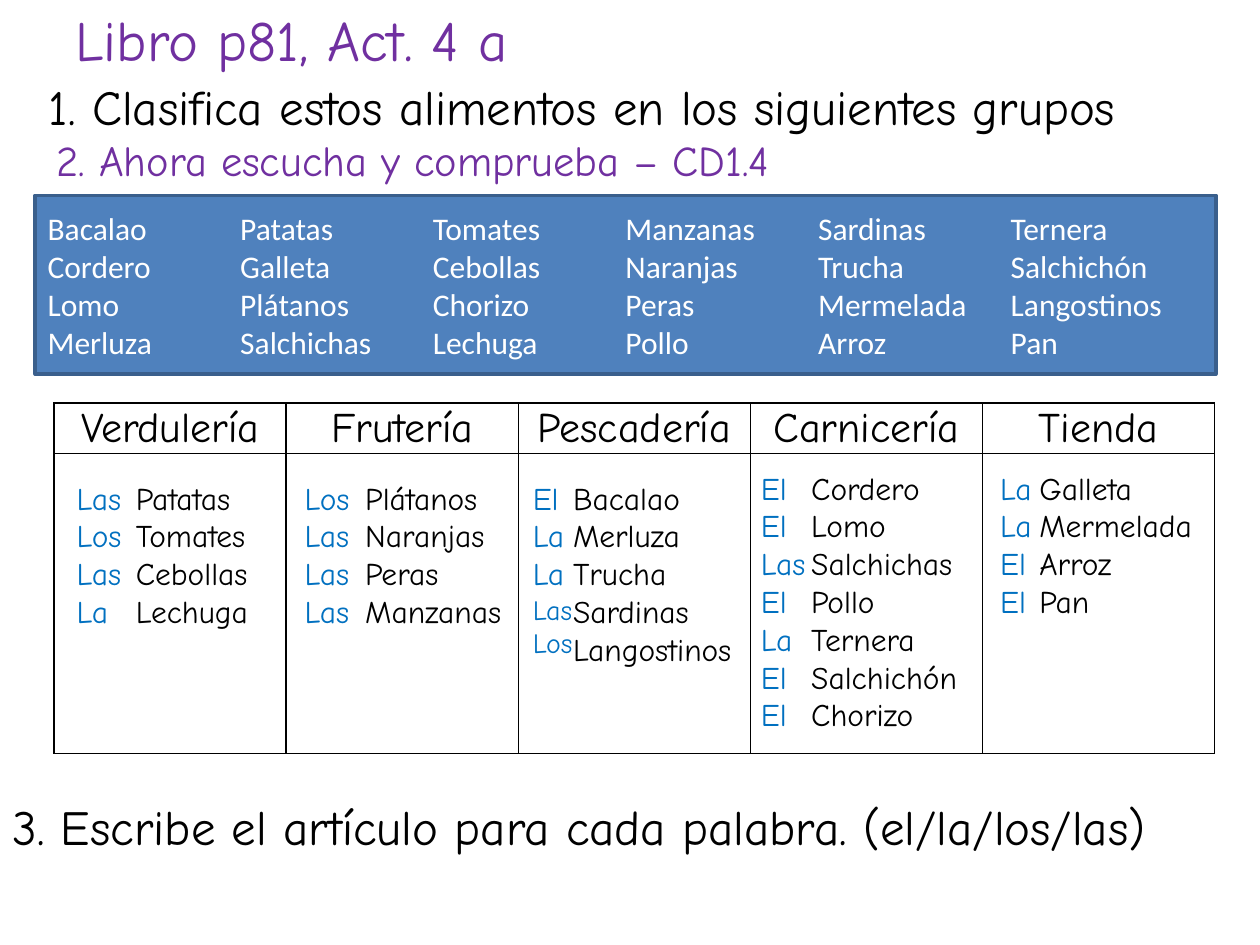
from dataclasses import dataclass

from lxml import etree
from pptx import Presentation
from pptx.dml.color import RGBColor
from pptx.enum.shapes import MSO_SHAPE
from pptx.enum.text import MSO_ANCHOR, PP_ALIGN
from pptx.oxml.ns import qn
from pptx.util import Inches, Pt

LEFT, CENTER = PP_ALIGN.LEFT, PP_ALIGN.CENTER
TOP, MIDDLE = MSO_ANCHOR.TOP, MSO_ANCHOR.MIDDLE
RECTANGLE = MSO_SHAPE.RECTANGLE

HAND_FONT, BOX_FONT = "Comic Neue", "Calibri"
BLACK, WHITE, PURPLE, ARTICLE_BLUE = "000000", "FFFFFF", "7030A0", "0070C0"
BOX_FILL, BOX_EDGE = "4F81BD", "3A5F8C"

FOODS = [
    "Bacalao", "Cordero", "Lomo", "Merluza",
    "Patatas", "Galleta", "Plátanos", "Salchichas",
    "Tomates", "Cebollas", "Chorizo", "Lechuga",
    "Manzanas", "Naranjas", "Peras", "Pollo",
    "Sardinas", "Trucha", "Mermelada", "Arroz",
    "Ternera", "Salchichón", "Langostinos", "Pan",
]
FOOD_COLUMNS = 6


@dataclass
class Shop:
    name: str
    top: float
    article_left: float
    article_width: float
    food_left: float
    food_width: float
    answers: list[tuple[str, str]]


SHOPS = [
    Shop("Verdulería", 3.75, 0.51, 0.59, 0.98, 1.26,
         [("Las", "Patatas"), ("Los", "Tomates"), ("Las", "Cebollas"), ("La", "Lechuga")]),
    Shop("Frutería", 3.75, 2.32, 0.67, 2.8, 1.42,
         [("Los", "Plátanos"), ("Las", "Naranjas"), ("Las", "Peras"), ("Las", "Manzanas")]),
    Shop("Pescadería", 3.75, 4.13, 0.62, 4.45, 1.73,
         [("El", "Bacalao"), ("La", "Merluza"), ("La", "Trucha"),
          ("Las", "Sardinas"), ("Los", "Langostinos")]),
    Shop("Carnicería", 3.67, 5.94, 0.59, 6.34, 1.73,
         [("El", "Cordero"), ("El", "Lomo"), ("Las", "Salchichas"), ("El", "Pollo"),
          ("La", "Ternera"), ("El", "Salchichón"), ("El", "Chorizo")]),
    Shop("Tienda", 3.67, 7.84, 0.47, 8.15, 1.5,
         [("La", "Galleta"), ("La", "Mermelada"), ("El", "Arroz"), ("El", "Pan")]),
]
TIGHT_SHOP, TIGHT_ARTICLES = "Pescadería", ("Las", "Los")


def rgb(value: str) -> RGBColor:
    return RGBColor.from_string(value)


def write_lines(frame, lines: list[str], sizes: list[float], color: str,
                font: str = HAND_FONT, align=LEFT) -> None:
    """Write one paragraph per line, each with its own size."""
    for index, (line, size) in enumerate(zip(lines, sizes)):
        paragraph = frame.paragraphs[0] if index == 0 else frame.add_paragraph()
        paragraph.alignment = align
        run = paragraph.add_run()
        run.text = line
        run.font.size = Pt(size)
        run.font.name = font
        run.font.color.rgb = rgb(color)


def add_text(slide, left: float, top: float, width: float, height: float,
             lines: list[str], sizes: list[float], color: str, wrap: bool = False):
    box = slide.shapes.add_textbox(Inches(left), Inches(top), Inches(width), Inches(height))
    box.text_frame.word_wrap = wrap
    write_lines(box.text_frame, lines, sizes, color)
    return box.text_frame


def add_title(slide, text: str) -> None:
    title = slide.shapes.title
    title.left, title.top = Inches(0.34), Inches(0.05)
    title.width, title.height = Inches(8.5), Inches(0.63)
    frame = title.text_frame
    frame.vertical_anchor = TOP
    frame.margin_left = Inches(0.26)
    write_lines(frame, [text], [32.4], PURPLE)
    frame.paragraphs[0].line_spacing = 0.9


def add_food_box(slide) -> None:
    box = slide.shapes.add_shape(RECTANGLE, Inches(0.28), Inches(1.55),
                                 Inches(9.37), Inches(1.42))
    box.shadow.inherit = False
    box.fill.solid()
    box.fill.fore_color.rgb = rgb(BOX_FILL)
    box.line.color.rgb = rgb(BOX_EDGE)
    box.line.width = Pt(2)
    frame = box.text_frame
    frame.word_wrap = True
    frame.vertical_anchor = MIDDLE
    write_lines(frame, FOODS, [18] * len(FOODS), WHITE, BOX_FONT)
    box.element.txBody.find(qn("a:bodyPr")).set("numCol", str(FOOD_COLUMNS))


def add_borders(cell) -> None:
    properties = cell._tc.get_or_add_tcPr()
    for side in ("a:lnL", "a:lnR", "a:lnT", "a:lnB"):
        line = etree.SubElement(properties, qn(side), w=str(Pt(1)))
        fill = etree.SubElement(line, qn("a:solidFill"))
        etree.SubElement(fill, qn("a:srgbClr"), val=BLACK)


def add_shop_table(slide) -> None:
    table = slide.shapes.add_table(2, len(SHOPS), Inches(0.43), Inches(3.2),
                                   Inches(9.21), Inches(2.78)).table
    table.first_row = table.horz_banding = False
    table.rows[0].height, table.rows[1].height = Inches(0.4), Inches(2.38)
    for cell in table.iter_cells():
        add_borders(cell)
        cell.fill.background()
    for column, shop in enumerate(SHOPS):
        header = table.cell(0, column)
        header.vertical_anchor = MIDDLE
        header.margin_left = header.margin_right = Inches(0.05)
        header.margin_top = header.margin_bottom = 0
        write_lines(header.text_frame, [shop.name], [24], BLACK, align=CENTER)


def add_answers(slide, shop: Shop) -> None:
    articles = [article for article, _ in shop.answers]
    foods = [food for _, food in shop.answers]
    sizes = [16 if shop.name == TIGHT_SHOP and article in TIGHT_ARTICLES else 18
             for article in articles]
    height = 0.1 + 0.3 * len(foods)
    add_text(slide, shop.food_left, shop.top, shop.food_width, height,
             foods, [18] * len(foods), BLACK, wrap=True)
    add_text(slide, shop.article_left, shop.top, shop.article_width, height,
             articles, sizes, ARTICLE_BLUE)


def main() -> None:
    presentation = Presentation()
    presentation.slide_width, presentation.slide_height = Inches(10), Inches(7.5)
    slide = presentation.slides.add_slide(presentation.slide_layouts[5])

    # Heading and the first two tasks
    add_title(slide, "Libro p81, Act. 4 a")
    add_text(slide, 0.29, 0.56, 9.67, 0.57,
             ["1. Clasifica estos alimentos en los siguientes grupos"], [28], BLACK)
    listening = add_text(slide, 0.35, 0.98, 8.34, 0.63,
                         ["2. Ahora escucha y comprueba – CD1.4"], [24.3], PURPLE, wrap=True)
    listening.vertical_anchor = MIDDLE
    listening.paragraphs[0].line_spacing = 0.9

    # Foods to sort, and the shops with their answers
    add_food_box(slide)
    add_shop_table(slide)
    for shop in SHOPS:
        add_answers(slide, shop)

    # Last task
    add_text(slide, 0, 6.27, 10.09, 0.57,
             ["3. Escribe el artículo para cada palabra. (el/la/los/las)"], [28], BLACK)

    presentation.save("out.pptx")


if __name__ == "__main__":
    main()
